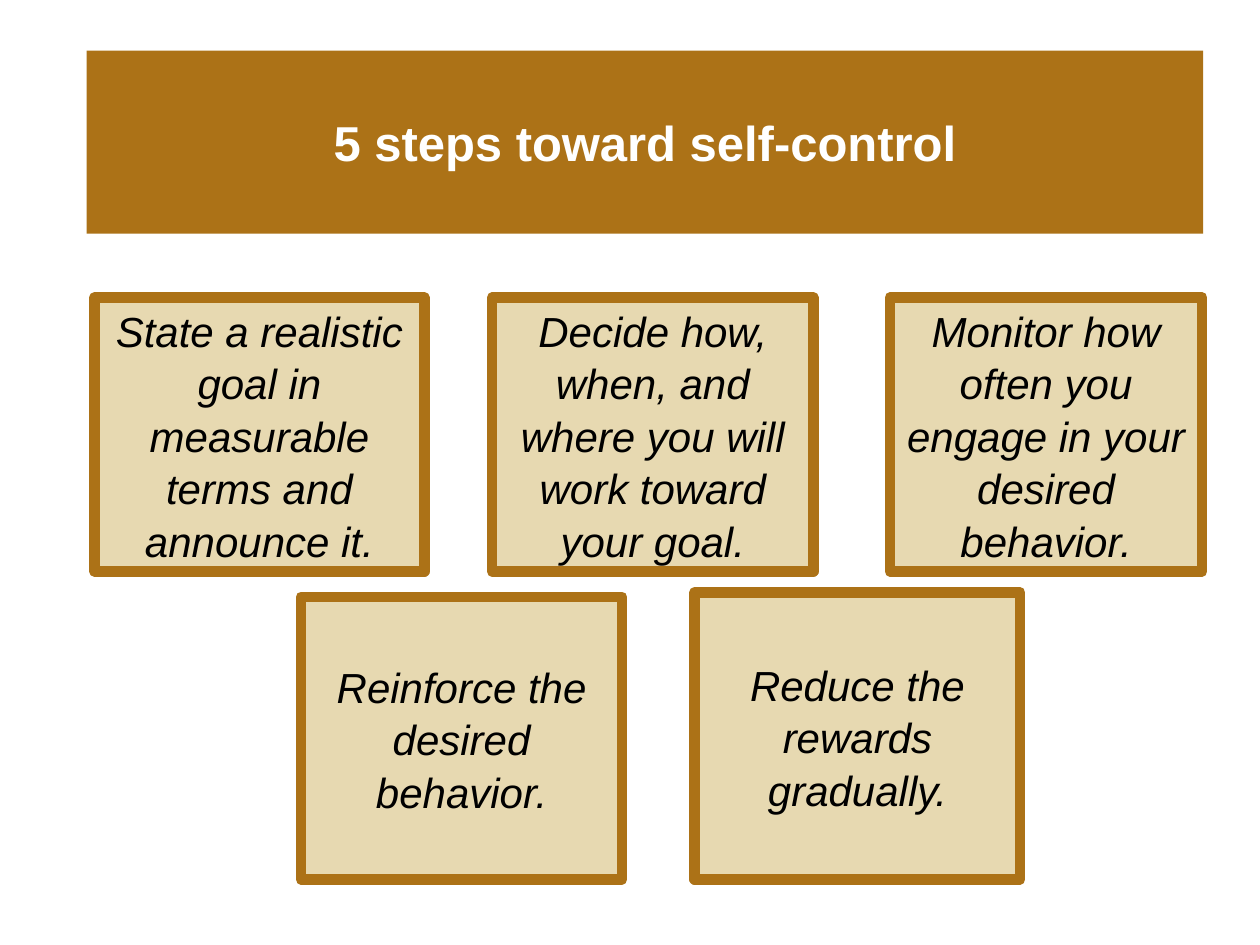
from pptx import Presentation
from pptx.dml.color import RGBColor
from pptx.enum.shapes import MSO_SHAPE
from pptx.enum.text import MSO_ANCHOR, MSO_AUTO_SIZE, PP_ALIGN
from pptx.util import Pt

RECT = MSO_SHAPE.RECTANGLE
MIDDLE = MSO_ANCHOR.MIDDLE
CENTER = PP_ALIGN.CENTER
FIXED = MSO_AUTO_SIZE.NONE

BROWN, SAND, WHITE, BLACK = "AC7217", "E7D9B1", "FFFFFF", "000000"

STEPS = [
    ("State a realistic goal in measurable terms and announce it.",
     (54, 170, 188.5, 156.5)),
    ("Decide how, when, and where you will work toward your goal.",
     (281.25, 170, 183.5, 156.5)),
    ("Monitor how often you engage in your desired behavior.",
     (508.5, 170, 178.5, 156.5)),
    ("Reinforce the desired behavior.", (172, 341, 183.5, 161.5)),
    ("Reduce the rewards gradually.", (397, 338.5, 186, 164)),
]


def paint(fill, color):
    fill.solid()
    fill.fore_color.rgb = RGBColor.from_string(color)


def write(shape, text, size, color, bold=False, italic=False):
    frame = shape.text_frame
    frame.text = text
    frame.word_wrap = True
    frame.auto_size = FIXED
    frame.vertical_anchor = MIDDLE
    para = frame.paragraphs[0]
    para.alignment = CENTER
    font = para.runs[0].font
    font.name, font.size = "Arial", Pt(size)
    font.bold, font.italic = bold, italic
    paint(font.fill, color)
    return para


def add_title(slide, box, text):
    title = slide.shapes.title
    title.left, title.top, title.width, title.height = map(Pt, box)
    paint(title.fill, BROWN)
    write(title, text, 28, WHITE, bold=True)


def add_step(slide, box, text):
    card = slide.shapes.add_shape(RECT, *map(Pt, box))
    card.shadow.inherit = False
    paint(card.fill, SAND)
    paint(card.line.fill, BROWN)
    card.line.width = Pt(6)
    para = write(card, text, 24, BLACK, italic=True)
    para.line_spacing = 1.04


def main():
    deck = Presentation()
    deck.slide_width, deck.slide_height = Pt(720), Pt(540)
    slide = deck.slides.add_slide(deck.slide_layouts[5])
    add_title(slide, (49.5, 29, 638, 104.5), "5 steps toward self-control")
    for text, box in STEPS:
        add_step(slide, box, text)
    deck.save("out.pptx")


if __name__ == "__main__":
    main()
